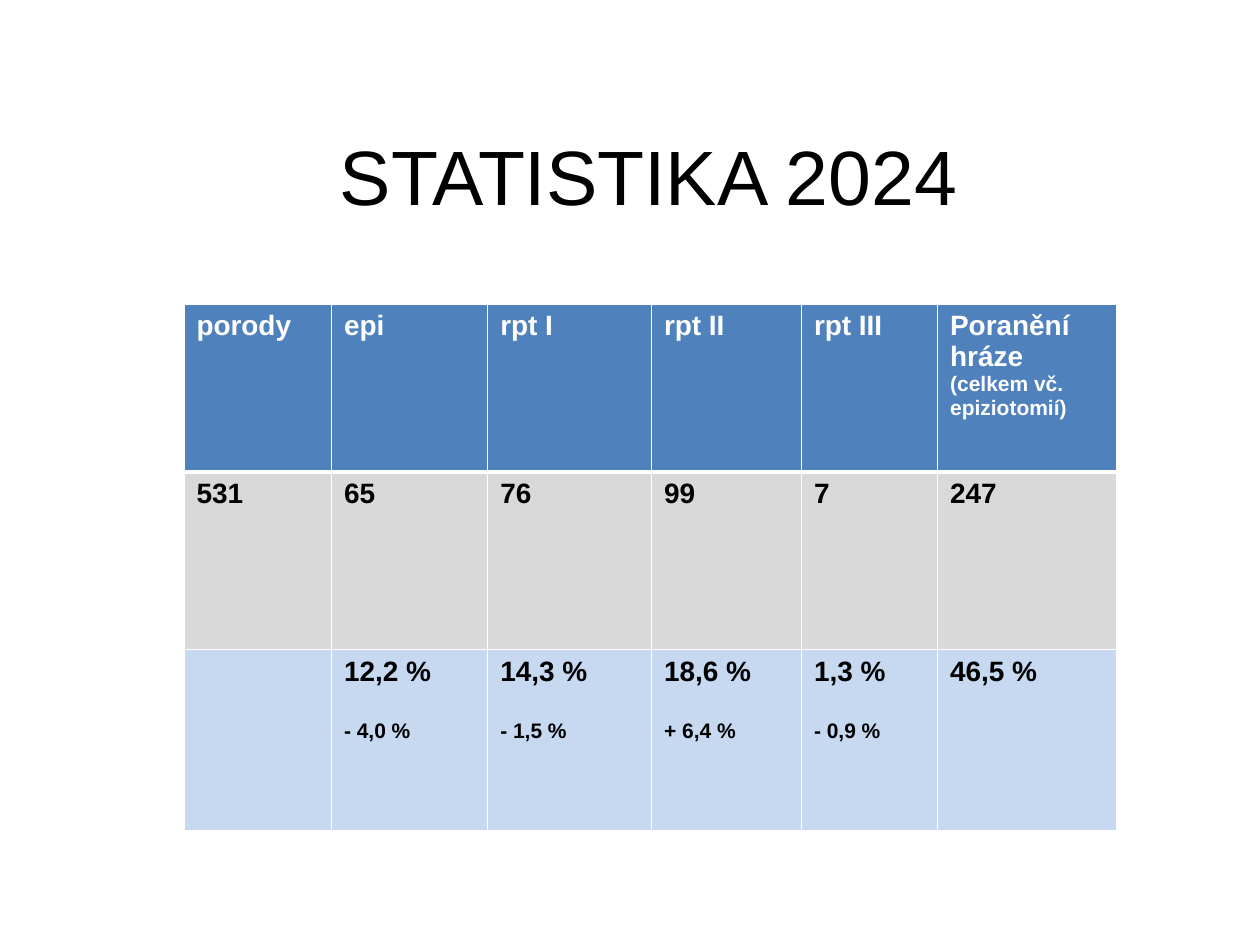
from lxml.etree import SubElement
from pptx import Presentation
from pptx.dml.color import RGBColor
from pptx.enum.text import MSO_ANCHOR as Anchor, PP_ALIGN as Align
from pptx.oxml.ns import qn
from pptx.util import Pt

BLACK = RGBColor(0x00, 0x00, 0x00)
WHITE = RGBColor(0xFF, 0xFF, 0xFF)
BLUE = RGBColor(0x4F, 0x81, 0xBD)
GREY = RGBColor(0xD9, 0xD9, 0xD9)
PALE_BLUE = RGBColor(0xC6, 0xD9, 0xF1)

FONT = "Arial"
MAIN_SIZE, NOTE_SIZE = 16, 12
THIN, THICK = 0.96, 3

COLUMN_WIDTHS = [84.3, 89.3, 93.6, 85.7, 77.8, 102.2]
ROW_HEIGHTS = [95.8, 101.5, 103.4]

# Each cell holds a main line and, where there is one, a smaller note
HEADINGS = [("porody",), ("epi",), ("rpt I",), ("rpt II",), ("rpt III",),
            ("Poranění hráze", "(celkem vč. epiziotomií)")]
COUNTS = [("531",), ("65",), ("76",), ("99",), ("7",), ("247",)]
SHARES = [(), ("12,2 %", "- 4,0 %"), ("14,3 %", "- 1,5 %"),
          ("18,6 %", "+ 6,4 %"), ("1,3 %", "- 0,9 %"), ("46,5 %",)]

# Cells, fill, text colour, gap above the note, top and bottom border
ROWS = [
    (HEADINGS, BLUE, WHITE, 0, THIN, THICK),
    (COUNTS, GREY, BLACK, 0, THICK, THIN),
    (SHARES, PALE_BLUE, BLACK, 18.4, THIN, THIN),
]


def add_span(para, text, size, color, bold=False):
    span = para.add_run()
    span.text = text
    span.font.name = FONT
    span.font.size = Pt(size)
    span.font.bold = bold
    span.font.color.rgb = color


def add_title(page, text):
    box = page.shapes.add_textbox(Pt(64.8), Pt(-53.3), Pt(612), Pt(306))
    frame = box.text_frame
    frame.word_wrap = True
    frame.vertical_anchor = Anchor.MIDDLE
    frame.margin_left = frame.margin_right = Pt(0)
    frame.margin_top = frame.margin_bottom = Pt(0)
    para = frame.paragraphs[0]
    para.alignment = Align.CENTER
    add_span(para, text, 44, BLACK)


def set_borders(cell, top, bottom):
    # Border lines must come before the fill in the cell properties
    properties = cell._tc.get_or_add_tcPr()
    sides = {"a:lnL": THIN, "a:lnR": THIN, "a:lnT": top, "a:lnB": bottom}
    for tag, width in sides.items():
        line = SubElement(properties, qn(tag), w=str(Pt(width)))
        fill = SubElement(line, qn("a:solidFill"))
        SubElement(fill, qn("a:srgbClr"), val=str(WHITE))


def fill_cell(cell, lines, fill, color, gap, top, bottom):
    set_borders(cell, top, bottom)
    cell.fill.solid()
    cell.fill.fore_color.rgb = fill
    frame = cell.text_frame
    for index, text in enumerate(lines):
        para = frame.add_paragraph() if index else frame.paragraphs[0]
        if index:
            para.space_before = Pt(gap)
        add_span(para, text, NOTE_SIZE if index else MAIN_SIZE, color, bold=True)


def add_statistics(page):
    frame = page.shapes.add_table(
        len(ROWS), len(COLUMN_WIDTHS), Pt(105.1), Pt(173.9),
        Pt(sum(COLUMN_WIDTHS)), Pt(sum(ROW_HEIGHTS)))
    table = frame.table
    for column, width in zip(table.columns, COLUMN_WIDTHS):
        column.width = Pt(width)
    for row, height, (entries, *style) in zip(table.rows, ROW_HEIGHTS, ROWS):
        row.height = Pt(height)
        for cell, lines in zip(row.cells, entries):
            fill_cell(cell, lines, *style)


def main():
    deck = Presentation()
    deck.slide_width, deck.slide_height = Pt(720), Pt(540)
    page = deck.slides.add_slide(deck.slide_layouts[6])
    add_title(page, "STATISTIKA 2024")
    add_statistics(page)
    deck.save("out.pptx")


if __name__ == "__main__":
    main()
